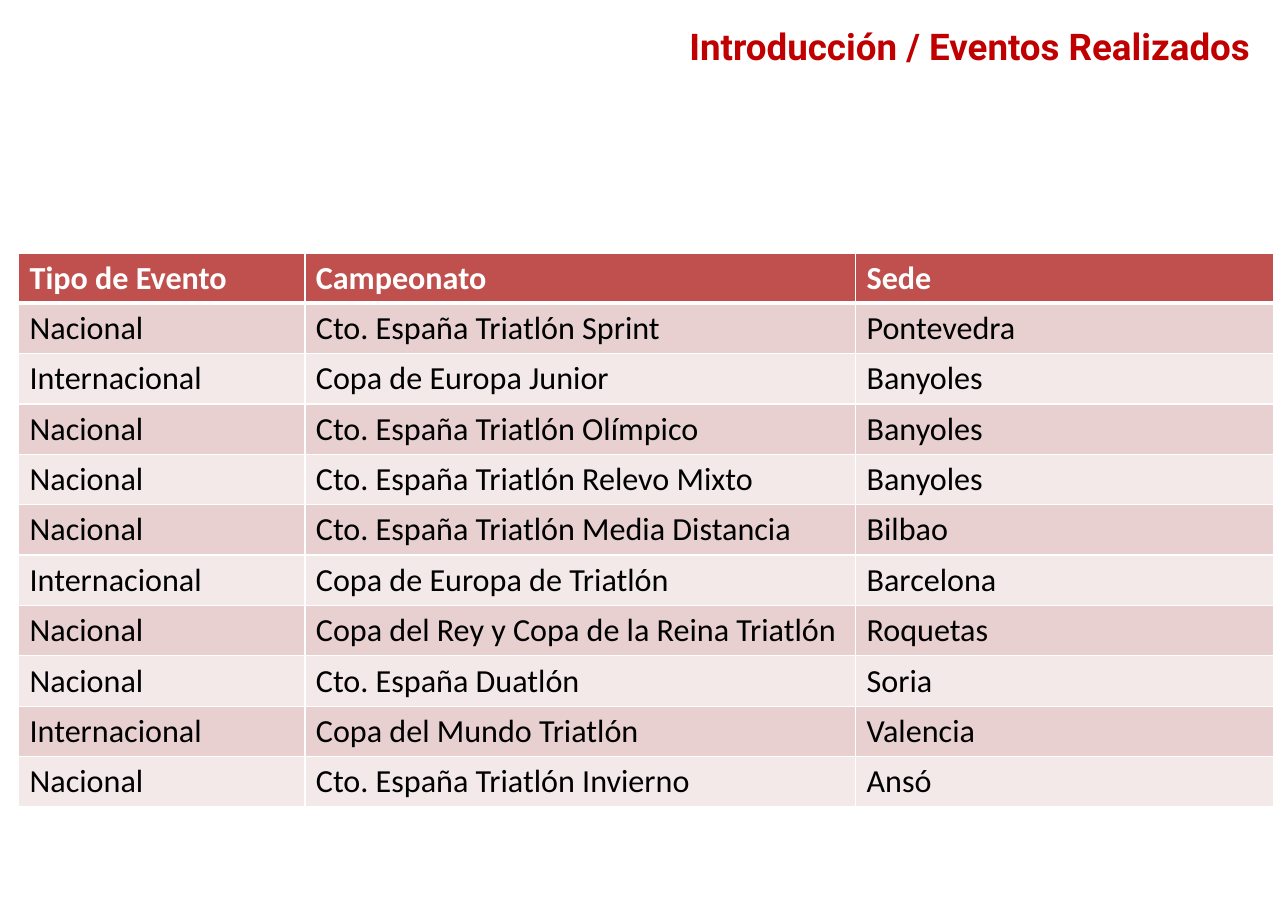
from typing import NamedTuple

from lxml import etree
from pptx import Presentation
from pptx.dml.color import RGBColor
from pptx.enum import text
from pptx.oxml import ns
from pptx.util import Cm, Pt


class Event(NamedTuple):
    kind: str
    championship: str
    venue: str


HEADER = Event("Tipo de Evento", "Campeonato", "Sede")
EVENTS = [
    Event("Nacional", "Cto. España Triatlón Sprint", "Pontevedra"),
    Event("Internacional", "Copa de Europa Junior", "Banyoles"),
    Event("Nacional", "Cto. España Triatlón Olímpico", "Banyoles"),
    Event("Nacional", "Cto. España Triatlón Relevo Mixto", "Banyoles"),
    Event("Nacional", "Cto. España Triatlón Media Distancia", "Bilbao"),
    Event("Internacional", "Copa de Europa de Triatlón", "Barcelona"),
    Event("Nacional", "Copa del Rey y Copa de la Reina Triatlón", "Roquetas"),
    Event("Nacional", "Cto. España Duatlón", "Soria"),
    Event("Internacional", "Copa del Mundo Triatlón", "Valencia"),
    Event("Nacional", "Cto. España Triatlón Invierno", "Ansó"),
]
COLUMN_WIDTHS = (6.6, 12.7, 9.65)
ROW_HEIGHT = 1.16
HEADER_FILL = "C0504D"
BAND_FILLS = ("F4E9E9", "E8D0D0")
WHITE = "FFFFFF"


def color(value: str) -> RGBColor:
    return RGBColor.from_string(value)


def write(frame, content: str, *, size: float, font: str = "Calibri",
          fill: str = "000000", bold: bool = False,
          align=text.PP_ALIGN.LEFT) -> None:
    paragraph = frame.paragraphs[0]
    paragraph.alignment = align
    run = paragraph.add_run()
    run.text = content
    run.font.name = font
    run.font.size = Pt(size)
    run.font.bold = bold
    run.font.color.rgb = color(fill)


def set_borders(cell, top: float, bottom: float) -> None:
    """Give the cell white borders, with widths in points; the sides are 1 pt."""
    properties = cell._tc.get_or_add_tcPr()
    widths = {"lnL": 1, "lnR": 1, "lnT": top, "lnB": bottom}
    for index, (side, width) in enumerate(widths.items()):
        line = etree.Element(ns.qn(f"a:{side}"), w=str(Pt(width)))
        solid = etree.SubElement(line, ns.qn("a:solidFill"))
        etree.SubElement(solid, ns.qn("a:srgbClr"), val=WHITE)
        properties.insert(index, line)


def add_title(slide) -> None:
    title = slide.shapes.title
    title.left, title.top = Cm(12.8), Cm(0.43)
    title.width, title.height = Cm(16.28), Cm(1.5)
    frame = title.text_frame
    frame.word_wrap = True
    frame.auto_size = text.MSO_AUTO_SIZE.NONE
    frame.vertical_anchor = text.MSO_ANCHOR.TOP
    write(frame, "Introducción / Eventos Realizados", size=24, font="Roboto",
          fill="C00000", bold=True, align=text.PP_ALIGN.RIGHT)


def add_event_table(slide) -> None:
    rows = [HEADER, *EVENTS]
    table = slide.shapes.add_table(
        len(rows), len(COLUMN_WIDTHS), Cm(0.43), Cm(5.83),
        Cm(sum(COLUMN_WIDTHS)), Cm(ROW_HEIGHT * len(rows))).table
    for column, width in zip(table.columns, COLUMN_WIDTHS):
        column.width = Cm(width)
    for index, event in enumerate(rows):
        table.rows[index].height = Cm(ROW_HEIGHT)
        is_header = index == 0
        for column, content in enumerate(event):
            cell = table.cell(index, column)
            cell.fill.solid()
            cell.fill.fore_color.rgb = color(
                HEADER_FILL if is_header else BAND_FILLS[index % 2])
            set_borders(cell, top=3 if index == 1 else 1,
                        bottom=3 if is_header else 1)
            write(cell.text_frame, content, size=21, bold=is_header,
                  fill=WHITE if is_header else "000000")


def main() -> None:
    presentation = Presentation()
    presentation.slide_width = Cm(29.7)
    presentation.slide_height = Cm(21)
    slide = presentation.slides.add_slide(presentation.slide_layouts[5])
    add_title(slide)
    add_event_table(slide)
    presentation.save("out.pptx")


if __name__ == "__main__":
    main()
